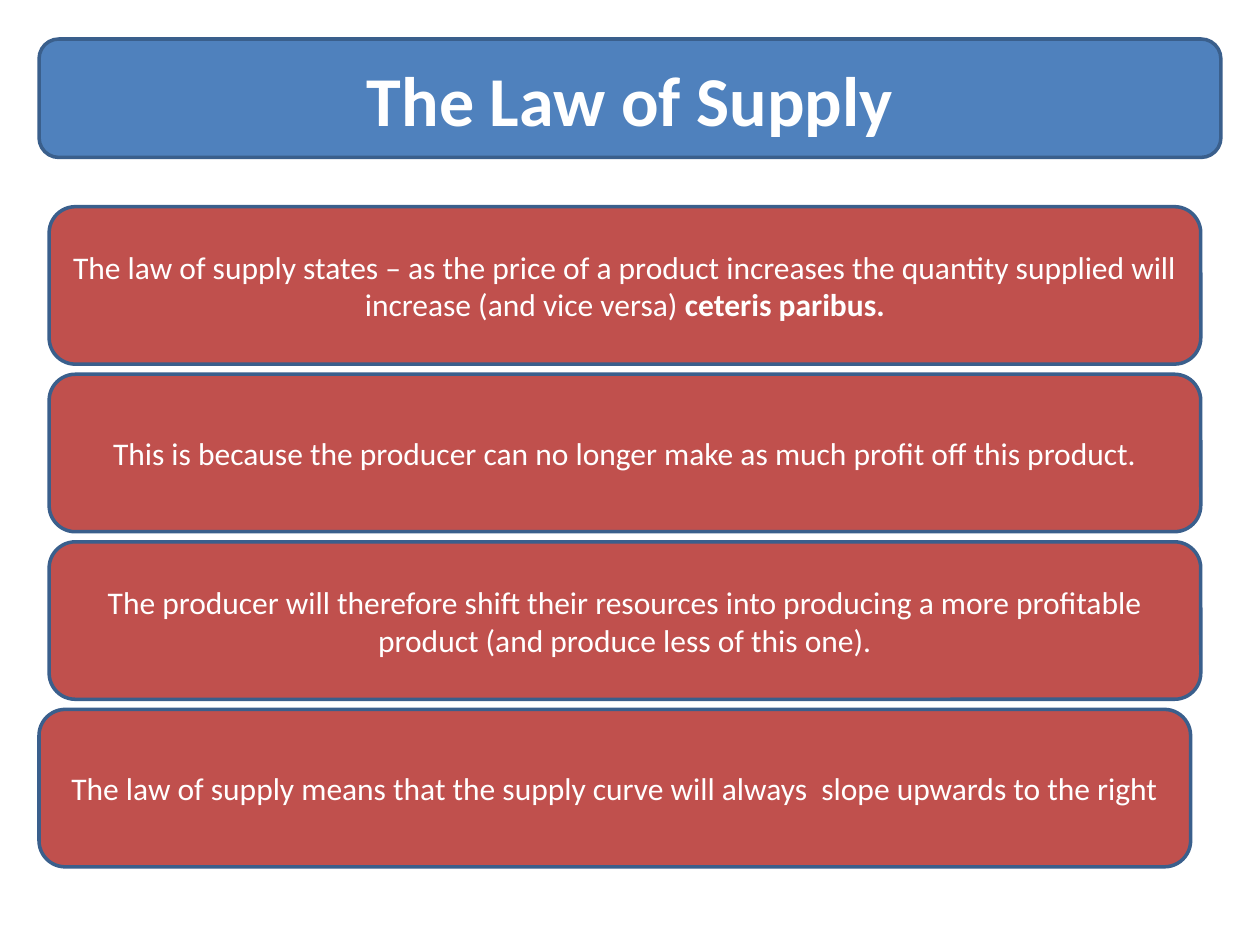
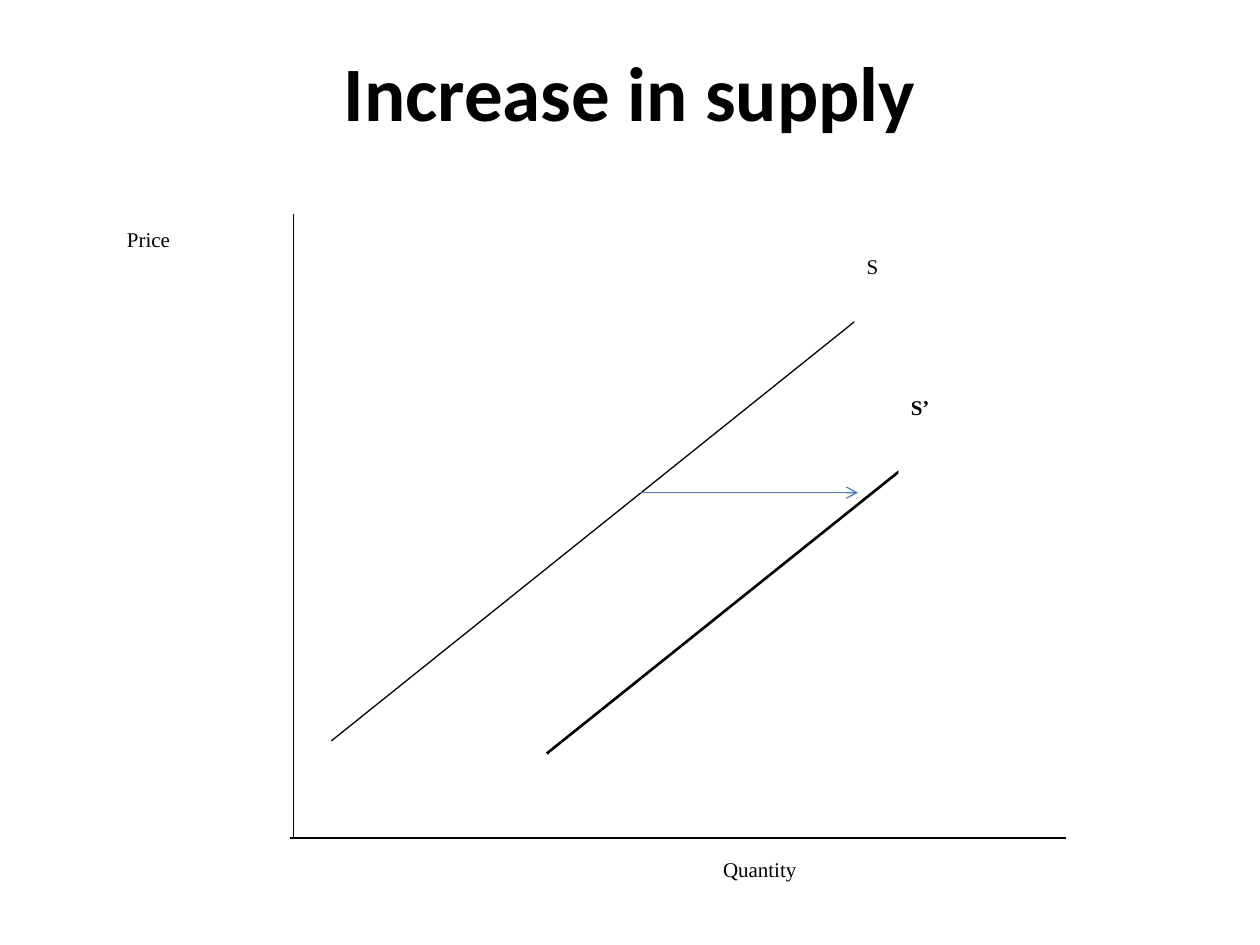
from typing import NamedTuple

from lxml.etree import SubElement
from pptx import Presentation
from pptx.dml.color import RGBColor
from pptx.enum.shapes import MSO_CONNECTOR as Connector, MSO_SHAPE as Shape
from pptx.enum.text import MSO_ANCHOR as Anchor, PP_ALIGN as Align
from pptx.oxml.ns import qn
from pptx.util import Inches, Pt

BLACK = RGBColor(0x00, 0x00, 0x00)
WHITE = RGBColor(0xFF, 0xFF, 0xFF)
BLUE = RGBColor(0x4F, 0x81, 0xBD)
RED = RGBColor(0xC0, 0x50, 0x4D)
OUTLINE = RGBColor(0x3A, 0x5F, 0x8C)
ARROW_BLUE = RGBColor(0x4B, 0x7E, 0xBC)
SANS = "Calibri"
SERIF = "Times New Roman"
TITLE_ONLY = 5

STATEMENTS = [
    [("The law of supply states – as the price of a product increases the quantity "
      "supplied will increase (and vice versa) ", False), ("ceteris paribus.", True)],
    [("This is because the producer can no longer make as much profit off this product.", False)],
    [("The producer will therefore shift their resources into producing a more "
      "profitable product (and produce less of this one).", False)],
    [("The law of supply means that the supply curve will always  slope upwards to the right", False)],
]


class Box(NamedTuple):
    left: float
    top: float
    width: float
    height: float

    def inches(self):
        return [Inches(length) for length in self]

    def inner(self, left, top, width, height):
        return Box(self.left + left, self.top + top, width, height)


def style_font(para, name, size, color, bold=None):
    font = para.font
    font.name, font.size, font.bold = name, Pt(size), bold
    font.color.rgb = color


def add_title(page, text, box, size, color, anchor):
    title = page.shapes.title
    title.left, title.top, title.width, title.height = box.inches()
    frame = title.text_frame
    frame.text = text
    frame.word_wrap = True
    frame.vertical_anchor = anchor
    para = frame.paragraphs[0]
    para.alignment = Align.CENTER
    style_font(para, SANS, size, color, True)


def add_panel(page, box, fill):
    panel = page.shapes.add_shape(Shape.ROUNDED_RECTANGLE, *box.inches())
    panel.shadow.inherit = False
    panel.fill.solid()
    panel.fill.fore_color.rgb = fill
    panel.line.color.rgb = OUTLINE
    panel.line.width = Pt(2)
    return panel


def add_title_band(page, text, box):
    band = add_panel(page, box, BLUE)
    page.shapes.title.element.addprevious(band.element)
    add_title(page, text, box, 40, WHITE, Anchor.MIDDLE)


def add_statements(page, box, gap=0.08, last_shift=-0.08):
    count = len(STATEMENTS)
    height = (box.height - gap * (count - 1)) / count
    for index, spans in enumerate(STATEMENTS):
        shift = last_shift if index == count - 1 else 0
        place = box.inner(shift, index * (height + gap), box.width, height)
        frame = add_panel(page, place, RED).text_frame
        frame.word_wrap = True
        frame.vertical_anchor = Anchor.MIDDLE
        para = frame.paragraphs[0]
        para.alignment = Align.CENTER
        style_font(para, SANS, 18, WHITE)
        for text, bold in spans:
            span = para.add_run()
            span.text = text
            if bold:
                span.font.bold = True


def add_line(page, box, start, end, width=0.75, color=BLACK, arrow=False):
    points = [Inches(length) for x, y in (start, end) for length in (box.left + x, box.top + y)]
    line = page.shapes.add_connector(Connector.STRAIGHT, *points)
    line.line.color.rgb = color
    line.line.width = Pt(width)
    if arrow:
        SubElement(line.line._get_or_add_ln(), qn("a:tailEnd"), type="arrow")
    SubElement(line.element.spPr, qn("a:effectLst"))


def add_label(page, text, box, bold=None):
    label = page.shapes.add_textbox(*box.inches())
    label.fill.solid()
    label.fill.fore_color.rgb = WHITE
    frame = label.text_frame
    frame.word_wrap = True
    frame.text = text
    style_font(frame.paragraphs[0], SERIF, 12, BLACK, bold)


def add_supply_graph(page, box):
    axis_x = 0.03
    add_line(page, box, (axis_x, 0), (axis_x, box.height))
    add_line(page, box, (box.width, box.height), (0, box.height))
    add_label(page, "Price", box.inner(-1.39, 0.05, 1.14, 1.89))
    add_label(page, "Quantity", box.inner(3.34, box.height + 0.1, 2.64, 0.69))
    add_line(page, box, (4.91, 0.51), (0.33, 4.18))
    add_label(page, "S", box.inner(4.48, 0.26, 0.99, 0.69))
    add_line(page, box, (5.25, 1.71), (2.04, 4.28), 1.5)
    add_label(page, "S’", box.inner(4.83, 1.38, 1.18, 0.82), True)
    add_line(page, box, (2.78, 2.21), (4.51, 2.21), color=ARROW_BLUE, arrow=True)


def add_page(deck):
    return deck.slides.add_slide(deck.slide_layouts[TITLE_ONLY])


def build_law_page(deck):
    page = add_page(deck)
    add_title_band(page, "The Law of Supply", Box(0.31, 0.31, 9.38, 0.94))
    add_statements(page, Box(0.39, 1.64, 9.14, 5.24))


def build_increase_page(deck):
    page = add_page(deck)
    add_title(page, "Increase in supply", Box(0.5, 0.3, 9, 1.25), 44, BLACK, Anchor.TOP)
    add_supply_graph(page, Box(2.3, 1.7, 6.16, 4.95))


def main():
    deck = Presentation()
    deck.slide_width, deck.slide_height = Inches(10), Inches(7.5)
    build_law_page(deck)
    build_increase_page(deck)
    deck.save("out.pptx")


if __name__ == "__main__":
    main()
